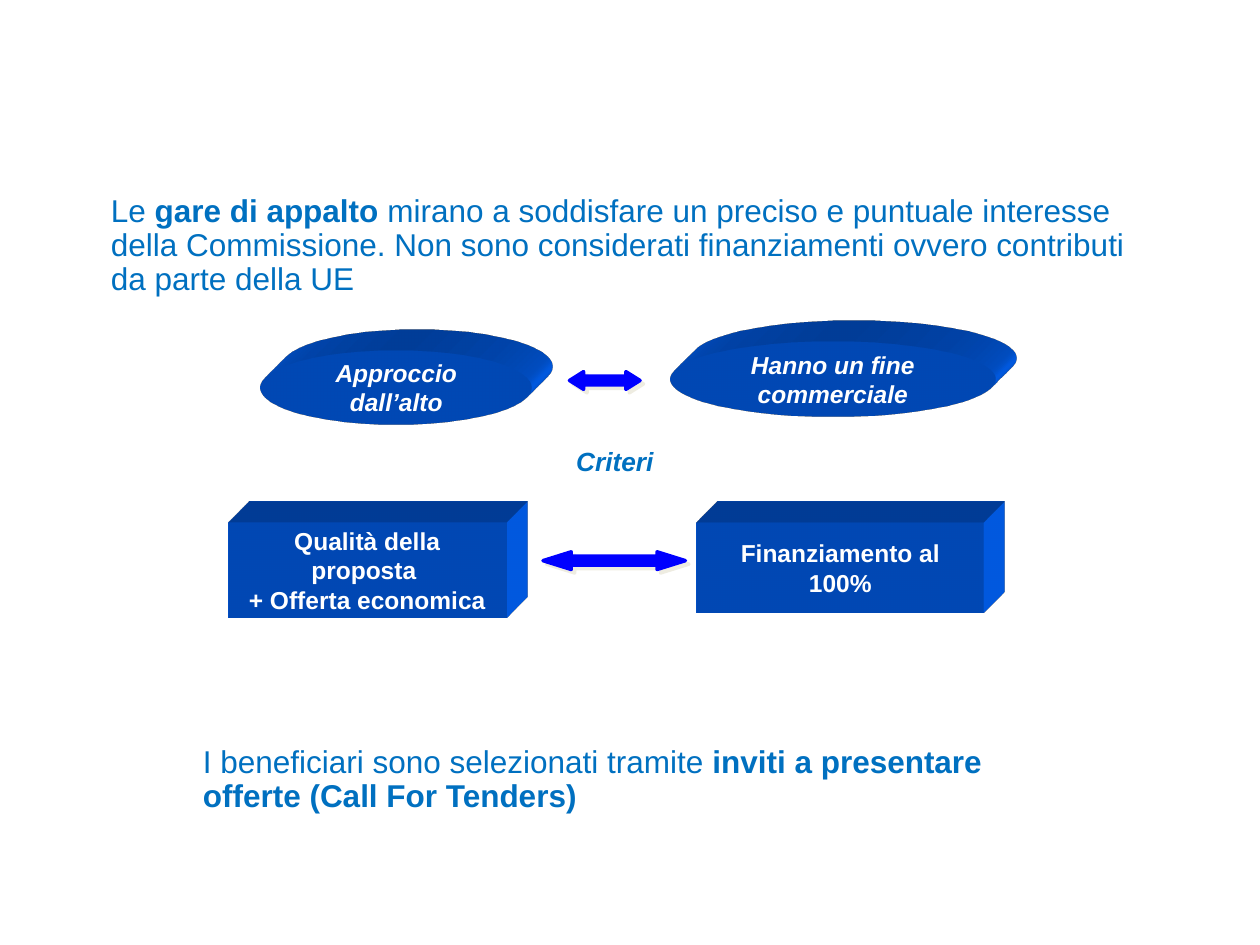
"""Build the slide on tenders: aims, approach, criteria and selection of beneficiaries."""
import pptx
import pptx.util
from pptx.dml.color import RGBColor
from pptx.enum.shapes import MSO_SHAPE
from pptx.enum.text import MSO_ANCHOR, PP_ALIGN
from pptx.oxml import parse_xml
from pptx.oxml.ns import nsdecls
from pptx.util import Inches

THEME = {
    "font": "Arial", "text": "0070C0", "block": "0066FF", "block_text": "FFFFFF",
    "arrow": "0000FF", "shadow": "EEECE1",
    "body_size": 18, "heading_size": 15, "block_size": 14,
}
SCENE = (
    f'<a:scene3d {nsdecls("a")}><a:camera prst="legacyObliqueTopRight"/>'
    '<a:lightRig rig="legacyFlat3" dir="b"/></a:scene3d>'
)
EXTRUSION = (
    f'<a:sp3d {nsdecls("a")} extrusionH="430200" prstMaterial="legacyMatte">'
    '<a:bevelT w="13500" h="13500" prst="angle"/><a:bevelB w="13500" h="13500" prst="angle"/>'
    f'<a:extrusionClr><a:srgbClr val="{THEME["block"]}"/></a:extrusionClr></a:sp3d>'
)
SHADOW = (
    f'<a:effectLst {nsdecls("a")}><a:outerShdw dist="35921" dir="2700000" algn="ctr" '
    f'rotWithShape="0"><a:srgbClr val="{THEME["shadow"]}"/></a:outerShdw></a:effectLst>'
)


def style(font, size, color, bold=None, italic=None):
    font.name = THEME["font"]
    font.size = pptx.util.Pt(THEME[size])
    font.color.rgb = RGBColor.from_string(THEME[color])
    font.bold = bold
    font.italic = italic


def set_up_text(frame):
    frame.word_wrap = True
    frame.vertical_anchor = MSO_ANCHOR.BOTTOM
    frame.margin_left = frame.margin_right = Inches(0.07)
    frame.margin_top = frame.margin_bottom = Inches(0.04)
    para = frame.paragraphs[0]
    para.line_spacing = 0.9
    return para


deck = pptx.Presentation()
deck.slide_width, deck.slide_height = Inches(10), Inches(7.5)
page = deck.slides.add_slide(deck.slide_layouts[6])

blocks = [
    (MSO_SHAPE.RECTANGLE, (5.53, 4.15, 2.28, 0.71), ["Finanziamento al 100%"]),
    (MSO_SHAPE.RECTANGLE, (1.81, 4.15, 2.21, 0.75),
     ["Qualità della proposta ", "+ Offerta economica"]),
    (MSO_SHAPE.OVAL, (2.07, 2.78, 2.15, 0.59), ["Approccio dall’alto"]),
    (MSO_SHAPE.OVAL, (5.32, 2.71, 2.58, 0.6), ["Hanno un fine commerciale"]),
]
for kind, place, lines in blocks:
    block = page.shapes.add_shape(kind, *map(Inches, place))
    block.shadow.inherit = False
    block.fill.solid()
    block.fill.fore_color.rgb = RGBColor.from_string(THEME["block"])
    block.line.fill.background()
    for element in (SCENE, EXTRUSION):
        block.element.spPr.append(parse_xml(element))
    frame = block.text_frame
    frame.word_wrap = True
    frame.vertical_anchor = MSO_ANCHOR.MIDDLE
    frame.text = "\n".join(lines)
    for para in frame.paragraphs:
        para.alignment = PP_ALIGN.CENTER
        style(para.font, "block_size", "block_text", True, kind == MSO_SHAPE.OVAL)

for place, head in [((4.31, 4.38, 1.13, 0.14), 1.6), ((4.52, 2.95, 0.56, 0.14), 0.8)]:
    arrow = page.shapes.add_shape(MSO_SHAPE.LEFT_RIGHT_ARROW, *map(Inches, place))
    arrow.adjustments[0], arrow.adjustments[1] = 0.5, head
    arrow.fill.solid()
    arrow.fill.fore_color.rgb = RGBColor.from_string(THEME["arrow"])
    arrow.line.color.rgb = RGBColor.from_string(THEME["arrow"])
    arrow.line.width = pptx.util.Pt(2)
    arrow.element.spPr.append(parse_xml(SHADOW))

statements = [
    ((0.81, 1.51, 8.29, 0.89), [
        ("Le", False), (" gare di appalto ", True),
        ("mirano a soddisfare un preciso e puntuale interesse della Commissione. "
         "Non sono considerati finanziamenti ovvero contributi da parte della UE", False)]),
    ((1.54, 5.81, 6.61, 0.69), [
        ("I beneficiari sono selezionati tramite ", False),
        ("inviti a presentare offerte (Call For Tenders)", True)]),
]
for place, spans in statements:
    box = page.shapes.add_textbox(*map(Inches, place))
    para = set_up_text(box.text_frame)
    style(para.font, "body_size", "text")
    for text, bold in spans:
        span = para.add_run()
        span.text = text
        span.font.bold = bold

heading = page.shapes.add_shape(MSO_SHAPE.OVAL, *map(Inches, (2.84, 3.44, 4.08, 0.45)))
heading.shadow.inherit = False
heading.fill.background()
heading.line.fill.background()
para = set_up_text(heading.text_frame)
para.text = "Criteri"
para.alignment = PP_ALIGN.CENTER
style(para.font, "heading_size", "text", True, True)

deck.save("out.pptx")
